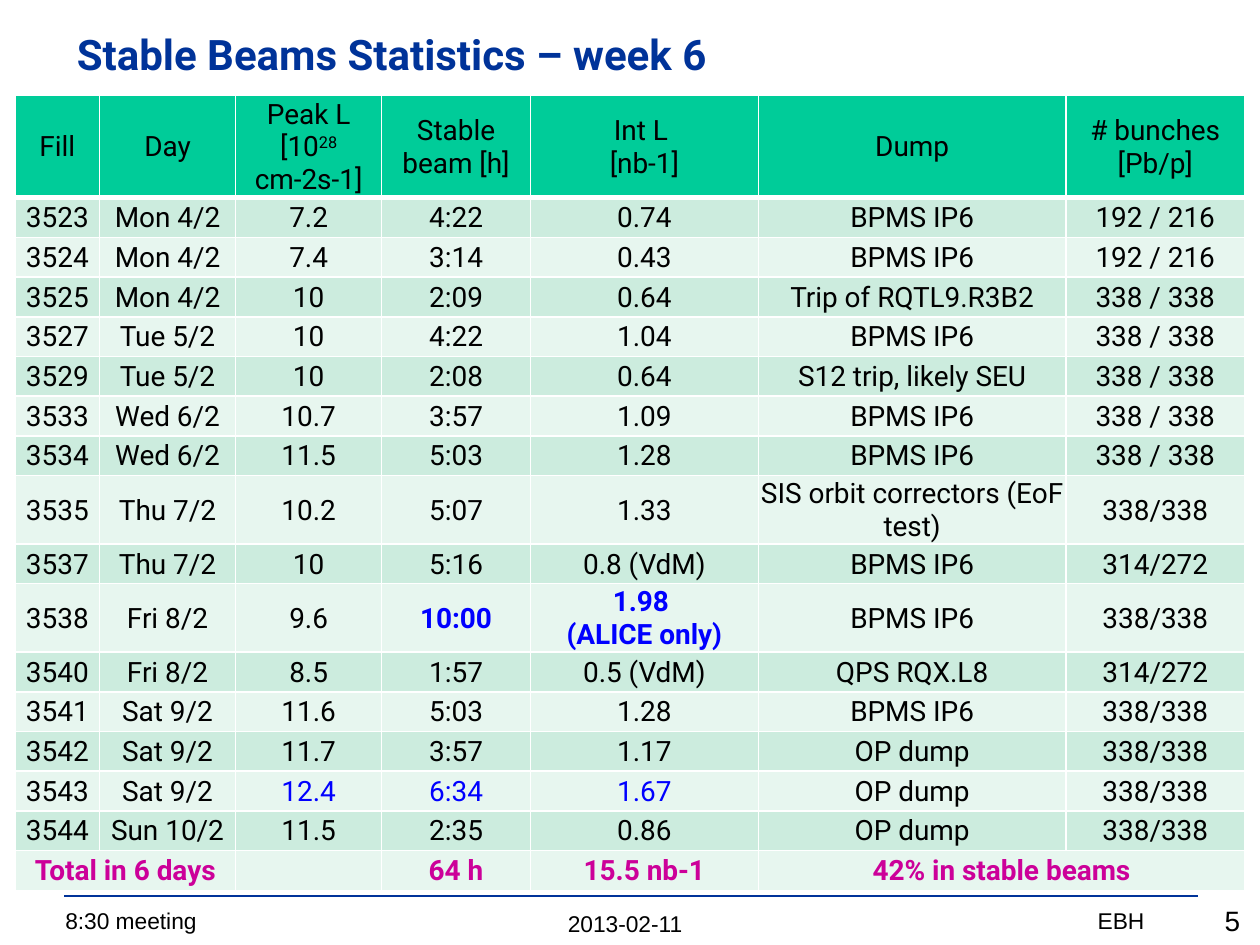
from pptx import Presentation
from pptx.dml.color import RGBColor
from pptx.enum.text import MSO_ANCHOR, MSO_AUTO_SIZE, PP_ALIGN
from pptx.oxml import parse_xml
from pptx.oxml.ns import nsdecls
from pptx.util import Inches, Pt

NAVY, BLUE, PINK, BLACK, WHITE = "003399", "0000FF", "CC0099", "000000", "FFFFFF"
HEAD, BANDS = "00CC99", ("E7F6EF", "CCECDE")
LEFT, MID, RIGHT = PP_ALIGN.LEFT, PP_ALIGN.CENTER, PP_ALIGN.RIGHT

# In cell text a newline starts a paragraph, | breaks a line, ^ toggles superscript
ROWS = [
    ["Fill", "Day", "Peak L|[10^28 ^cm-2s-1]", "Stable beam [h]", "Int L |[nb-1]",
     "Dump", "# bunches\n[Pb/p]"],
    ["3523", "Mon 4/2", "7.2", "4:22", "0.74", "BPMS IP6", "192 / 216"],
    ["3524", "Mon 4/2", "7.4", "3:14", "0.43", "BPMS IP6", "192 / 216"],
    ["3525", "Mon 4/2", "10", "2:09", "0.64", "Trip of RQTL9.R3B2", "338 / 338"],
    ["3527", "Tue 5/2", "10", "4:22", "1.04", "BPMS IP6", "338 / 338"],
    ["3529", "Tue 5/2", "10", "2:08", "0.64", "S12 trip, likely SEU", "338 / 338"],
    ["3533", "Wed 6/2", "10.7", "3:57", "1.09", "BPMS IP6", "338 / 338"],
    ["3534", "Wed 6/2", "11.5", "5:03", "1.28", "BPMS IP6", "338 / 338"],
    ["3535", "Thu 7/2", "10.2", "5:07", "1.33", "SIS orbit correctors (EoF test)", "338/338"],
    ["3537", "Thu 7/2", "10", "5:16", "0.8 (VdM)", "BPMS IP6", "314/272"],
    ["3538", "Fri 8/2", "9.6", "10:00", "1.98 \n(ALICE only)", "BPMS IP6", "338/338"],
    ["3540", "Fri 8/2", "8.5", "1:57", "0.5 (VdM)", "QPS RQX.L8", "314/272"],
    ["3541", "Sat 9/2", "11.6", "5:03", "1.28", "BPMS IP6", "338/338"],
    ["3542", "Sat 9/2", "11.7", "3:57", "1.17", "OP dump", "338/338"],
    ["3543", "Sat 9/2", "12.4", "6:34", "1.67", "OP dump", "338/338"],
    ["3544", "Sun 10/2", "11.5", "2:35", "0.86", "OP dump", "338/338"],
    ["Total in 6 days", "", "", "64 h", "15.5 nb-1", "42% in stable beams", ""],
]
WIDTHS = [6.7, 10.8, 11.6, 11.8, 18.1, 24.4, 14.2]
LAST = len(ROWS) - 1
BEST = {(10, 3): (BLUE, True), (10, 4): (BLUE, True)}
BEST.update({(14, col): (BLUE, False) for col in (2, 3, 4)})
BEST.update({(LAST, col): (PINK, True) for col in range(len(WIDTHS))})


def tint(code):
    return RGBColor.from_string(code)


class Deck:
    """Holds the style and the current slide, on a grid of 100 columns by 75 rows."""

    def __init__(self):
        self.prs = Presentation()
        self.prs.slide_width, self.prs.slide_height = Inches(10), Inches(7.5)
        self.slide = self.prs.slides.add_slide(self.prs.slide_layouts[5])

    def grid(self, *cells):
        return [int(self.prs.slide_width * n / 100) for n in cells]

    def style(self, font, code, **form):
        for key, val in form.items():
            setattr(font, key, val)
        font.color.rgb = tint(code)

    def words(self, frame, text, code, align, **form):
        for num, line in enumerate(text.split("\n")):
            para = frame.add_paragraph() if num else frame.paragraphs[0]
            para.alignment = align
            for turn, part in enumerate(line.split("^")):
                for step, piece in enumerate(part.split("|")):
                    if step:
                        para.add_line_break()
                    if piece:
                        run = para.add_run()
                        run.text = piece
                        self.style(run.font, code, **form)
                        if turn % 2:
                            run.font._element.set("baseline", "30000")
            if not line:  # keeps an empty cell from stretching its row
                para._p.get_or_add_endParaRPr().set("sz", str(int(form["size"].pt * 100)))

    def title(self, text, *box):
        head = self.slide.shapes.title
        head.left, head.top, head.width, head.height = self.grid(*box)
        frame = head.text_frame
        frame.auto_size = MSO_AUTO_SIZE.NONE
        frame.vertical_anchor = MSO_ANCHOR.MIDDLE
        self.words(frame, text, NAVY, LEFT, name="Roboto", size=Pt(24), bold=True)

    def label(self, text, box, align, size=13):
        frame = self.slide.shapes.add_textbox(*self.grid(*box)).text_frame
        frame.word_wrap = True
        self.words(frame, text, BLACK, align, name="Arial", size=Pt(size))

    def rule(self, *ends):
        line = self.slide.shapes.add_connector(1, *self.grid(*ends))
        line.line.color.rgb, line.line.width = tint(NAVY), Pt(1.5)
        line._element.spPr.append(parse_xml(f"<a:effectLst {nsdecls('a')}/>"))

    def edge(self, cell, row):
        wide = {"L": 1, "R": 1, "T": 3 if row == 1 else 1, "B": 1 if row else 3}
        props = cell._tc.get_or_add_tcPr()
        for spot, (side, width) in enumerate(wide.items()):
            props.insert(spot, parse_xml(
                f'<a:ln{side} {nsdecls("a")} w="{Pt(width)}"><a:solidFill>'
                f'<a:srgbClr val="{WHITE}"/></a:solidFill></a:ln{side}>'))

    def table(self, rows, widths, left, top, first, each):
        high = first + each * (len(rows) - 1)
        grid = self.slide.shapes.add_table(
            len(rows), len(widths), *self.grid(left, top, sum(widths), high)).table
        grid.first_row = grid.horz_banding = False
        for col, width in zip(grid.columns, self.grid(*widths)):
            col.width = width
        inset = dict(margin_left=Inches(0.01), margin_right=Inches(0.01),
                     margin_top=Inches(0.01), margin_bottom=0,
                     vertical_anchor=MSO_ANCHOR.MIDDLE)
        for r, row in enumerate(rows):
            grid.rows[r].height = self.grid(each if r else first)[0]
            for c, text in enumerate(row):
                cell = grid.cell(r, c)
                for key, val in inset.items():
                    setattr(cell, key, val)
                cell.fill.solid()
                cell.fill.fore_color.rgb = tint(BANDS[r % 2] if r else HEAD)
                self.edge(cell, r)
                code, bold = BEST.get((r, c), (BLACK, False))
                self.words(cell.text_frame, text, code, MID,
                           name="Roboto", size=Pt(16), bold=bold)
        # The total row joins its first two and last two cells
        for c in (0, 5):
            grid.cell(LAST, c).merge(grid.cell(LAST, c + 1))


def main():
    deck = Deck()
    # Footer
    deck.label("2013-02-11", (24.2, 71.7, 50.8, 3.2), MID)
    deck.label("8:30 meeting", (4.2, 71.5, 37, 3.2), LEFT)
    deck.label("EBH", (62.6, 71.5, 29.2, 3.2), RIGHT)
    deck.rule(5.1, 71.1, 95.1, 71.1)
    deck.label("5", (87.9, 71.2, 11.5, 3.7), RIGHT, 16)
    # Heading and fill statistics
    deck.title("Stable Beams Statistics – week 6", 5.1, 0.9, 89.9, 6.8)
    deck.table(ROWS, WIDTHS, 1.2, 7.6, 4.1, 3.15)
    deck.prs.save("out.pptx")


if __name__ == "__main__":
    main()
